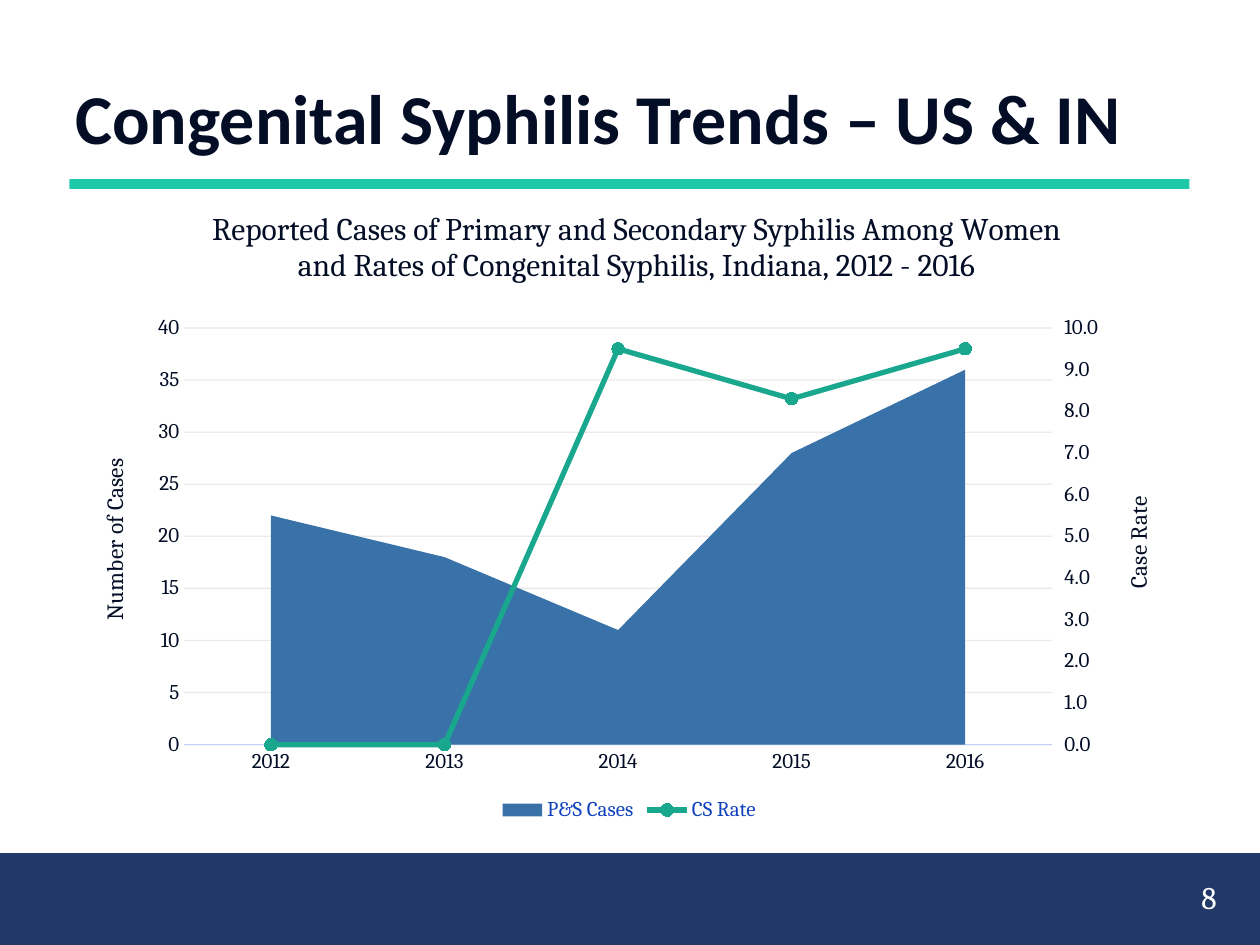
from copy import deepcopy

from lxml.etree import SubElement
from pptx import Presentation
from pptx.chart.axis import ValueAxis
from pptx.chart.data import CategoryChartData
from pptx.dml.color import RGBColor
from pptx.enum.chart import XL_CHART_TYPE, XL_LEGEND_POSITION, XL_MARKER_STYLE, XL_TICK_MARK
from pptx.enum.shapes import MSO_SHAPE
from pptx.enum.text import MSO_ANCHOR, PP_ALIGN
from pptx.oxml import parse_xml
from pptx.oxml.ns import nsdecls, qn
from pptx.util import Cm, Pt

INK = RGBColor(0x03, 0x0D, 0x26)
WHITE = RGBColor(0xFF, 0xFF, 0xFF)
TEAL = RGBColor(0x1E, 0xC8, 0xA8)
NAVY = RGBColor(0x22, 0x38, 0x68)
AREA_BLUE = RGBColor(0x39, 0x72, 0xA9)
RATE_GREEN = RGBColor(0x19, 0xA8, 0x8D)
MARKER_GREEN = RGBColor(0x91, 0xEF, 0xDD)
LEGEND_BLUE = RGBColor(0x0F, 0x41, 0xBE)
AXIS_BLUE = RGBColor(0xBE, 0xCF, 0xFA)
GRID_GREY = RGBColor(0xD9, 0xD9, 0xD9)
BODY_FONT = "Cambria"


def style_font(font, size, color=INK, name=BODY_FONT, bold=False):
    font.size = Pt(size)
    font.color.rgb = color
    font.name = name
    font.bold = bold


def add_text(page, text, left, top, width, height, align=PP_ALIGN.LEFT,
             anchor=MSO_ANCHOR.TOP, **font_format):
    box = page.shapes.add_textbox(Cm(left), Cm(top), Cm(width), Cm(height))
    frame = box.text_frame
    frame.word_wrap = True
    frame.vertical_anchor = anchor
    para = frame.paragraphs[0]
    para.alignment = align
    span = para.add_run()
    span.text = text
    style_font(span.font, **font_format)


def add_bar(page, color, left, top, width, height):
    bar = page.shapes.add_shape(MSO_SHAPE.RECTANGLE, Cm(left), Cm(top), Cm(width), Cm(height))
    bar.shadow.inherit = False
    bar.fill.solid()
    bar.fill.fore_color.rgb = color
    bar.line.fill.background()


def set_layout(element, **values):
    layout = element.find(qn("c:layout"))
    if layout is None:
        layout = parse_xml(f"<c:layout {nsdecls('c')}/>")
        text = element.find(qn("c:tx"))
        if text is None:
            element.insert(0, layout)
        else:
            text.addnext(layout)
    manual = SubElement(layout, qn("c:manualLayout"))
    for name, value in values.items():
        SubElement(manual, qn(f"c:{name}")).set("val", str(value))


def set_title(title, text, size, x, y, rotated=False):
    frame = title.text_frame
    span = frame.paragraphs[0].add_run()
    span.text = text
    style_font(span.font, size)
    if rotated:
        body = title._element.find(".//" + qn("a:bodyPr"))
        body.set("rot", "-5400000")
        body.set("vert", "horz")
    set_layout(title._element, xMode="edge", yMode="edge", x=x, y=y)


def split_value_axes(chart):
    plot_area = chart._chartSpace.chart.plotArea
    left_axis = chart.value_axis
    line_plot = parse_xml(
        f'<c:lineChart {nsdecls("c")}><c:grouping val="standard"/><c:varyColors val="0"/>'
        '<c:marker val="1"/><c:axId val="5001"/><c:axId val="5002"/></c:lineChart>'
    )
    area_plot = plot_area.find(qn("c:areaChart"))
    line_plot.insert(2, area_plot.findall(qn("c:ser"))[1])
    area_plot.addnext(line_plot)

    category = deepcopy(chart.category_axis._element)
    value = deepcopy(left_axis._element)
    for axis, own, other in ((category, "5001", "5002"), (value, "5002", "5001")):
        axis.find(qn("c:axId")).set("val", own)
        axis.find(qn("c:crossAx")).set("val", other)
    category.find(qn("c:delete")).set("val", "1")
    value.find(qn("c:axPos")).set("val", "r")
    value.find(qn("c:crosses")).set("val", "max")
    left_axis._element.addnext(value)
    value.addnext(category)
    for cross in plot_area.iter(qn("c:crossBetween")):
        cross.set("val", "between")
    return left_axis, ValueAxis(value)


def style_value_axis(axis, title, maximum, unit, number_format, tick, x, y):
    axis.minimum_scale = 0
    axis.maximum_scale = maximum
    axis.major_unit = unit
    axis.major_tick_mark = tick
    axis.minor_tick_mark = XL_TICK_MARK.NONE
    axis.tick_labels.number_format = number_format
    axis.tick_labels.number_format_is_linked = False
    style_font(axis.tick_labels.font, 12)
    axis.format.line.fill.background()
    set_title(axis.axis_title, title, 13.3, x, y, rotated=True)


def style_grid(axis):
    axis.has_major_gridlines = True
    line = axis.major_gridlines.format.line
    line.width = Pt(0.75)
    line.color.rgb = GRID_GREY
    grid = axis._element.find(qn("c:majorGridlines"))
    color = grid.find(".//" + qn("a:srgbClr"))
    SubElement(color, qn("a:alpha")).set("val", "55000")


def style_series(chart):
    area_plot, line_plot = chart.plots
    area_plot.vary_by_categories = False
    fill = area_plot.series[0].format.fill
    fill.solid()
    fill.fore_color.rgb = AREA_BLUE

    rate = line_plot.series[0]
    rate.smooth = False
    rate.marker.style = XL_MARKER_STYLE.CIRCLE
    rate.marker.size = 7
    rate.marker.format.fill.solid()
    rate.marker.format.fill.fore_color.rgb = MARKER_GREEN
    rate.marker.format.line.color.rgb = RATE_GREEN
    rate.format.line.width = Pt(3)
    rate.format.line.color.rgb = RATE_GREEN


def add_trend_chart(page):
    data = CategoryChartData()
    data.categories = ["2012", "2013", "2014", "2015", "2016"]
    data.add_series("P&S Cases", (22, 18, 11, 28, 36))
    data.add_series("CS Rate", (0, 0, 9.5, 8.3, 9.5))
    chart = page.shapes.add_chart(
        XL_CHART_TYPE.AREA, Cm(1.47), Cm(3.94), Cm(22.43), Cm(12.73), data
    ).chart
    style_font(chart.font, 10)
    left_axis, right_axis = split_value_axes(chart)
    style_series(chart)

    chart.has_title = True
    set_title(
        chart.chart_title,
        "Reported Cases of Primary and Secondary Syphilis Among Women "
        "and Rates of Congenital Syphilis, Indiana, 2012 - 2016",
        18, 0.12, 0.01,
    )
    style_value_axis(left_axis, "Number of Cases", 40, 5, "General",
                     XL_TICK_MARK.NONE, 0.02, 0.41)
    style_value_axis(right_axis, "Case Rate", 10, 1, "#,##0.0",
                     XL_TICK_MARK.OUTSIDE, 0.94, 0.47)
    style_grid(left_axis)
    right_axis.has_major_gridlines = False

    years = chart.category_axis
    years.has_major_gridlines = False
    years.major_tick_mark = XL_TICK_MARK.NONE
    years.format.line.width = Pt(0.75)
    years.format.line.color.rgb = AXIS_BLUE
    style_font(years.tick_labels.font, 12)

    chart.has_legend = True
    chart.legend.position = XL_LEGEND_POSITION.BOTTOM
    chart.legend.include_in_layout = False
    style_font(chart.legend.font, 12, LEGEND_BLUE)
    set_layout(chart._chartSpace.chart.plotArea, layoutTarget="inner", xMode="edge",
               yMode="edge", x=0.1, y=0.21, w=0.78, h=0.66)


def main():
    deck = Presentation()
    deck.slide_width = Cm(25.4)
    deck.slide_height = Cm(19.05)
    page = deck.slides.add_slide(deck.slide_layouts[6])
    add_bar(page, TEAL, 1.4, 3.61, 22.58, 0.2)
    add_bar(page, NAVY, 0, 17.2, 25.4, 1.85)
    add_text(page, "Congenital Syphilis Trends – US & IN", 1.27, 0.76, 22.86, 3.18,
             anchor=MSO_ANCHOR.MIDDLE, size=40, name="Calibri", bold=True)
    add_trend_chart(page)
    add_text(page, "8", 23.55, 17.58, 1.65, 1.07, align=PP_ALIGN.CENTER, size=18, color=WHITE)
    deck.save("out.pptx")


if __name__ == "__main__":
    main()
